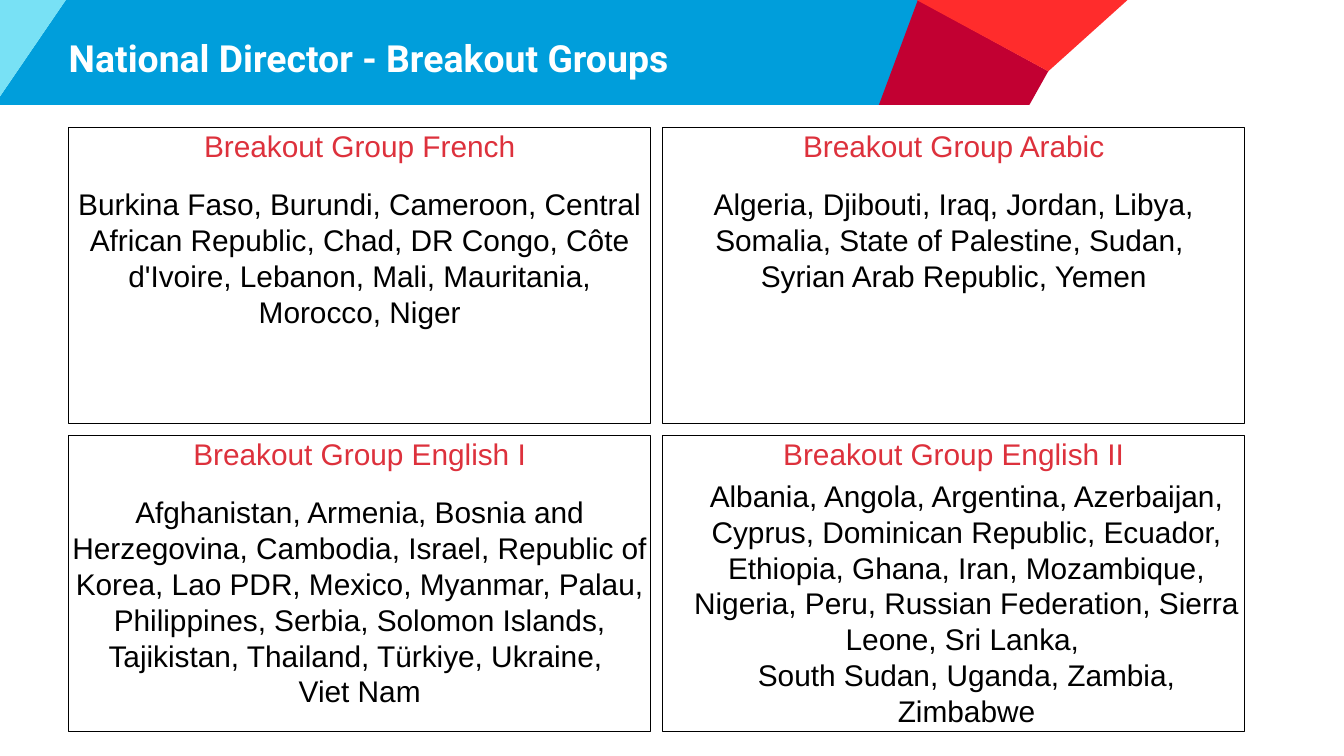
import pptx
import pptx.util
import pptx.dml.color
import pptx.enum.shapes
import pptx.enum.text

WHITE = pptx.dml.color.RGBColor(0xFF, 0xFF, 0xFF)
BLACK = pptx.dml.color.RGBColor(0x00, 0x00, 0x00)
BLUE = pptx.dml.color.RGBColor(0x00, 0x9E, 0xDB)
AQUA = pptx.dml.color.RGBColor(0x78, 0xE1, 0xF5)
CRIMSON = pptx.dml.color.RGBColor(0xC2, 0x00, 0x32)
RED = pptx.dml.color.RGBColor(0xFF, 0x2C, 0x2C)
HEADING_RED = pptx.dml.color.RGBColor(0xDD, 0x31, 0x3C)

WIDTH = pptx.util.Inches(10)
HEIGHT = WIDTH * 9 // 16
CENTER = pptx.enum.text.PP_ALIGN.CENTER

BANNER_PIECES = [
    (BLUE, [(4.9, 0), (68.8, 0), (65.6, 100), (0, 100), (0, 92)]),
    (AQUA, [(0, 0), (4.9, 0), (0, 92)]),
    (CRIMSON, [(68.3, 0), (65.4, 100), (76.6, 100), (78, 67), (78.9, 46)]),
    (RED, [(68.2, 0), (83.9, 0), (78, 68)]),
]
BANNER_PIECES[2][1][3:] = [(78, 68)]

GROUPS = [
    ("Breakout Group French",
     "Burkina Faso, Burundi, Cameroon, Central African Republic, Chad, DR Congo, "
     "Côte d'Ivoire, Lebanon, Mali, Mauritania, Morocco, Niger", 12, 0),
    ("Breakout Group Arabic",
     "Algeria, Djibouti, Iraq, Jordan, Libya, Somalia, State of Palestine, Sudan, "
     "\vSyrian Arab Republic, Yemen", 12, 0),
    ("Breakout Group English I",
     "Afghanistan, Armenia, Bosnia and Herzegovina, Cambodia, Israel, Republic of Korea, "
     "Lao PDR, Mexico, Myanmar, Palau, Philippines, Serbia, Solomon Islands, "
     "Tajikistan, Thailand, Türkiye, Ukraine, \vViet Nam", 12, 0),
    ("Breakout Group English II",
     "Albania, Angola, Argentina, Azerbaijan, Cyprus, Dominican Republic, Ecuador, "
     "Ethiopia, Ghana, Iran, Mozambique, Nigeria, Peru, Russian Federation, "
     "Sierra Leone, Sri Lanka, \vSouth Sudan, Uganda, Zambia, Zimbabwe", 3.2, 0.19),
]


def share(left, top, width, height):
    return (int(left * WIDTH / 100), int(top * HEIGHT / 100),
            int(width * WIDTH / 100), int(height * HEIGHT / 100))


def prepare_frame(shape, anchor):
    frame = shape.text_frame
    frame.word_wrap = True
    frame.vertical_anchor = anchor
    frame.margin_left = frame.margin_right = 0
    frame.margin_top = frame.margin_bottom = 0
    return frame


def style_font(para, name, size, color, bold=False):
    para.font.name = name
    para.font.size = pptx.util.Pt(size)
    para.font.color.rgb = color
    para.font.bold = bold


def add_banner(page, box):
    left, top, width, height = box
    for color, corners in BANNER_PIECES:
        points = [(left + x * width / 100, top + y * height / 100) for x, y in corners]
        builder = page.shapes.build_freeform(*points[0])
        builder.add_line_segments(points[1:], close=True)
        piece = builder.convert_to_shape()
        piece.shadow.inherit = False
        piece.fill.solid()
        piece.fill.fore_color.rgb = color
        piece.line.fill.background()


def add_title(page, box, text):
    title = page.shapes.add_textbox(*box)
    frame = prepare_frame(title, pptx.enum.text.MSO_ANCHOR.MIDDLE)
    para = frame.paragraphs[0]
    para.text = text
    style_font(para, "Roboto", 20, WHITE, bold=True)


def add_group(page, box, heading, countries, space, indent):
    panel = page.shapes.add_shape(pptx.enum.shapes.MSO_SHAPE.RECTANGLE, *box)
    panel.shadow.inherit = False
    panel.fill.solid()
    panel.fill.fore_color.rgb = WHITE
    panel.line.color.rgb = BLACK
    panel.line.width = pptx.util.Pt(0.75)
    frame = prepare_frame(panel, pptx.enum.text.MSO_ANCHOR.TOP)
    rows = [(frame.paragraphs[0], heading, HEADING_RED, 12),
            (frame.add_paragraph(), countries, BLACK, space)]
    for para, text, color, before in rows:
        para.text = text
        para.alignment = CENTER
        para.space_before = pptx.util.Pt(before)
        para.line_spacing = pptx.util.Pt(19.2)
        style_font(para, "Arial", 16, color)
    if indent:
        properties = para._p.get_or_add_pPr()
        properties.set("marL", str(pptx.util.Inches(indent)))
        properties.set("indent", "0")


def add_group_grid(page, box, groups, columns=2):
    left, top, width, height = box
    gap = WIDTH * 9 // 1000
    rows = len(groups) // columns
    cell_width = (width - gap * (columns - 1)) // columns
    cell_height = (height - gap * (rows - 1)) // rows
    for index, group in enumerate(groups):
        row, column = divmod(index, columns)
        cell = (left + column * (cell_width + gap), top + row * (cell_height + gap),
                cell_width, cell_height)
        add_group(page, cell, *group)


def main():
    deck = pptx.Presentation()
    deck.slide_width = WIDTH
    deck.slide_height = HEIGHT
    page = deck.slides.add_slide(deck.slide_layouts[6])
    add_banner(page, share(0, 0, 100, 13.87))
    add_title(page, share(5.12, 3.25, 60.4, 8.7), "National Director - Breakout Groups")
    add_group_grid(page, share(5.12, 16.9, 87.5, 79.9), GROUPS)
    deck.save("out.pptx")


if __name__ == "__main__":
    main()
